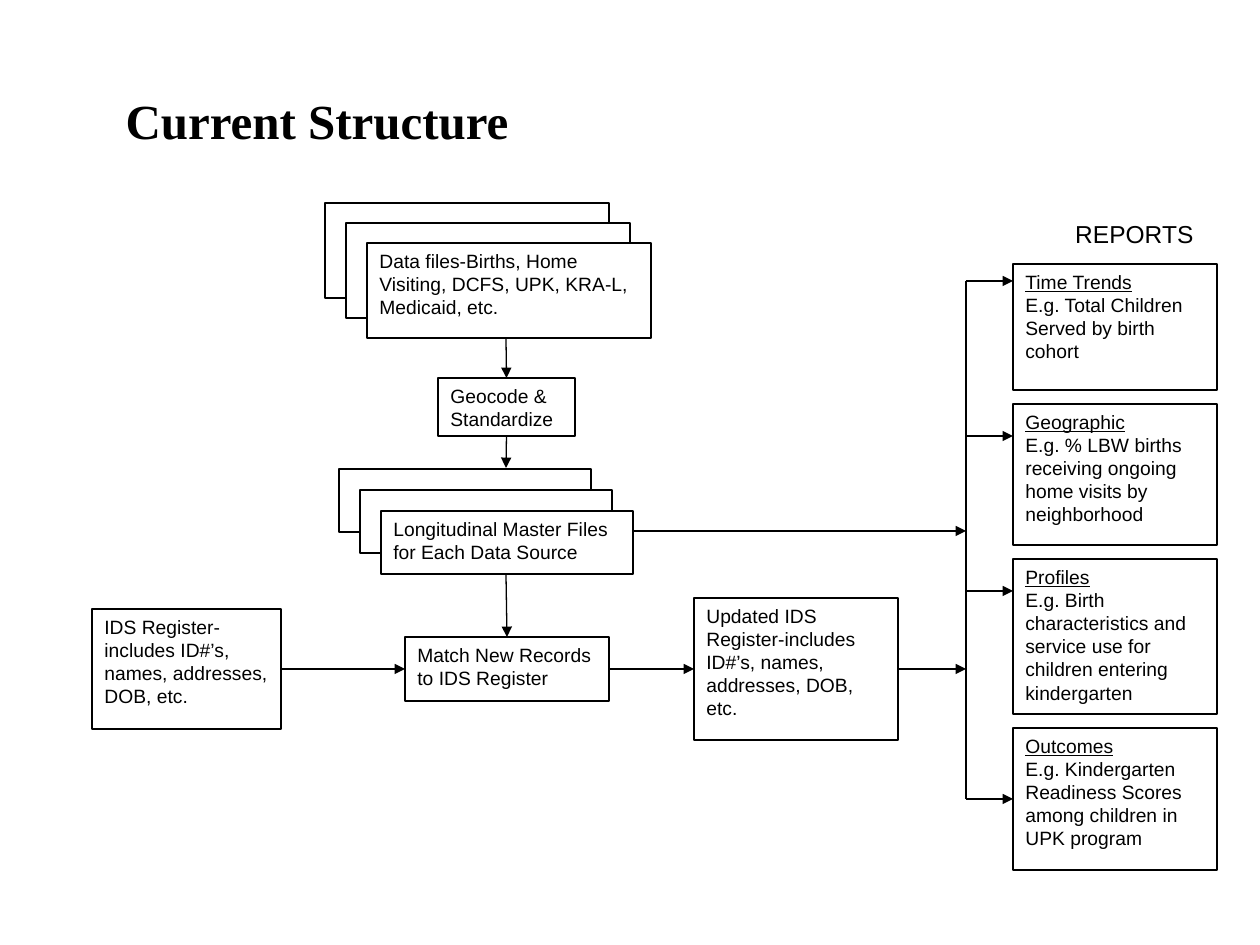
"""Build the Current Structure flow diagram slide."""
from pptx import Presentation
from pptx.dml.color import RGBColor
from pptx.enum.shapes import MSO_CONNECTOR as Connector, MSO_SHAPE as Preset
from pptx.enum.text import MSO_ANCHOR as Anchor, MSO_AUTO_SIZE as AutoSize, PP_ALIGN as Align
from pptx.oxml.ns import qn
from pptx.util import Pt
from lxml.etree import SubElement

BLACK = RGBColor(0x00, 0x00, 0x00)
WHITE = RGBColor(0xFF, 0xFF, 0xFF)
TOP, LEFT, RIGHT = 0, 1, 3
BOTTOM = 2
EMU_PER_PX = 914400 / 126


def px(length):
    return round(length * EMU_PER_PX)


def write_text(frame, text, size=11, font="Arial", bold=None, align=Align.LEFT,
               anchor=Anchor.TOP, heading=False):
    frame.text = text
    frame.word_wrap = True
    frame.auto_size = AutoSize.NONE
    frame.vertical_anchor = anchor
    for index, paragraph in enumerate(frame.paragraphs):
        paragraph.alignment = align
        paragraph.font.size = Pt(size)
        paragraph.font.name = font
        paragraph.font.bold = bold
        paragraph.font.color.rgb = BLACK
        if heading and index == 0:
            paragraph.font.underline = True


class Diagram:
    """Hold the line style and the current slide."""

    def __init__(self, slide, line_width=0.75):
        self.slide = slide
        self.line_width = Pt(line_width)

    def outline(self, line):
        line.color.rgb = BLACK
        line.width = self.line_width

    def title(self, text, x, y, w, h):
        title = self.slide.shapes.title
        title.left, title.top, title.width, title.height = map(px, (x, y, w, h))
        write_text(title.text_frame, text, size=28, font="Times New Roman", bold=True,
                   anchor=Anchor.MIDDLE)

    def label(self, text, x, y, w, h, **text_format):
        label = self.slide.shapes.add_textbox(*map(px, (x, y, w, h)))
        write_text(label.text_frame, text, **text_format)

    def box(self, text, x, y, w, h, parent=None, **text_format):
        shapes = (parent or self.slide).shapes
        box = shapes.add_shape(Preset.RECTANGLE, *map(px, (x, y, w, h)))
        box.shadow.inherit = False
        box.fill.solid()
        box.fill.fore_color.rgb = WHITE
        self.outline(box.line)
        if text:
            write_text(box.text_frame, text, **text_format)
        return box

    def stack(self, text, x, y, w, h, step_x, step_y):
        group = self.slide.shapes.add_group_shape()
        for layer, layer_text in enumerate(("", "", text)):
            self.box(layer_text, x + layer * step_x, y + layer * step_y, w, h, parent=group)

    def line(self, x1, y1, x2, y2, start=None, end=None, arrow=True):
        line = self.slide.shapes.add_connector(Connector.STRAIGHT, *map(px, (x1, y1, x2, y2)))
        self.outline(line.line)
        if arrow:
            SubElement(line.line._get_or_add_ln(), qn("a:tailEnd"), type="triangle")
        SubElement(line._element.spPr, qn("a:effectLst"))
        if start:
            line.begin_connect(*start)
        if end:
            line.end_connect(*end)


def main():
    presentation = Presentation()
    presentation.slide_width, presentation.slide_height = px(1260), px(945)
    slide = presentation.slides.add_slide(presentation.slide_layouts[5])
    diagram = Diagram(slide)
    diagram.title("Current Structure", 113, 63, 1071, 113)

    register_text = "includes ID#’s, names, addresses, DOB, etc."
    geocode = diagram.box("Geocode & Standardize", 438, 378, 137, 58)
    match = diagram.box("Match New Records to IDS Register", 405, 637, 204, 64)
    updated = diagram.box(f"Updated IDS Register-{register_text}", 694, 598, 204, 142)
    register = diagram.box(f"IDS Register-{register_text}", 92, 609, 189, 120)

    flow_x, flow_y, bus_x, report_x = 506, 669, 966, 1013
    diagram.line(281, flow_y, 405, flow_y, (register, RIGHT), (match, LEFT))
    diagram.line(609, flow_y, 694, flow_y, (match, RIGHT), (updated, LEFT))
    diagram.line(898, flow_y, bus_x, flow_y, start=(updated, RIGHT))
    diagram.line(flow_x, 338, flow_x, 378, end=(geocode, TOP))
    diagram.line(flow_x, 436, flow_x, 468, start=(geocode, BOTTOM))
    diagram.line(flow_x, 574, flow_x, 637, end=(match, TOP))
    diagram.line(634, 531, bus_x, 531)
    diagram.line(bus_x, 281, bus_x, 799, arrow=False)

    reports = (
        ("Time Trends", "E.g. Total Children Served by birth cohort", 126, 281),
        ("Geographic", "E.g. % LBW births receiving ongoing home visits by neighborhood", 141, 436),
        ("Profiles", "E.g. Birth characteristics and service use for children entering kindergarten",
         155, 591),
        ("Outcomes", "E.g. Kindergarten Readiness Scores among children in UPK program", 142, 799),
    )
    top, gap = 264, 14
    for heading, example, height, branch_y in reports:
        report = diagram.box(f"{heading}\n{example}", report_x, top, 204, height, heading=True)
        at_middle = branch_y == top + height / 2
        diagram.line(bus_x, branch_y, report_x, branch_y,
                     end=(report, LEFT) if at_middle else None)
        top += height + gap

    diagram.stack("Data files-Births, Home Visiting, DCFS, UPK, KRA-L, Medicaid, etc.",
                  325, 203, 284, 95, 21, 20)
    diagram.stack("Longitudinal Master Files for Each Data Source", 339, 469, 252, 63, 21, 21)
    diagram.label("REPORTS", 1027, 212, 179, 43, size=14, align=Align.RIGHT, anchor=Anchor.MIDDLE)
    presentation.save("out.pptx")


if __name__ == "__main__":
    main()
